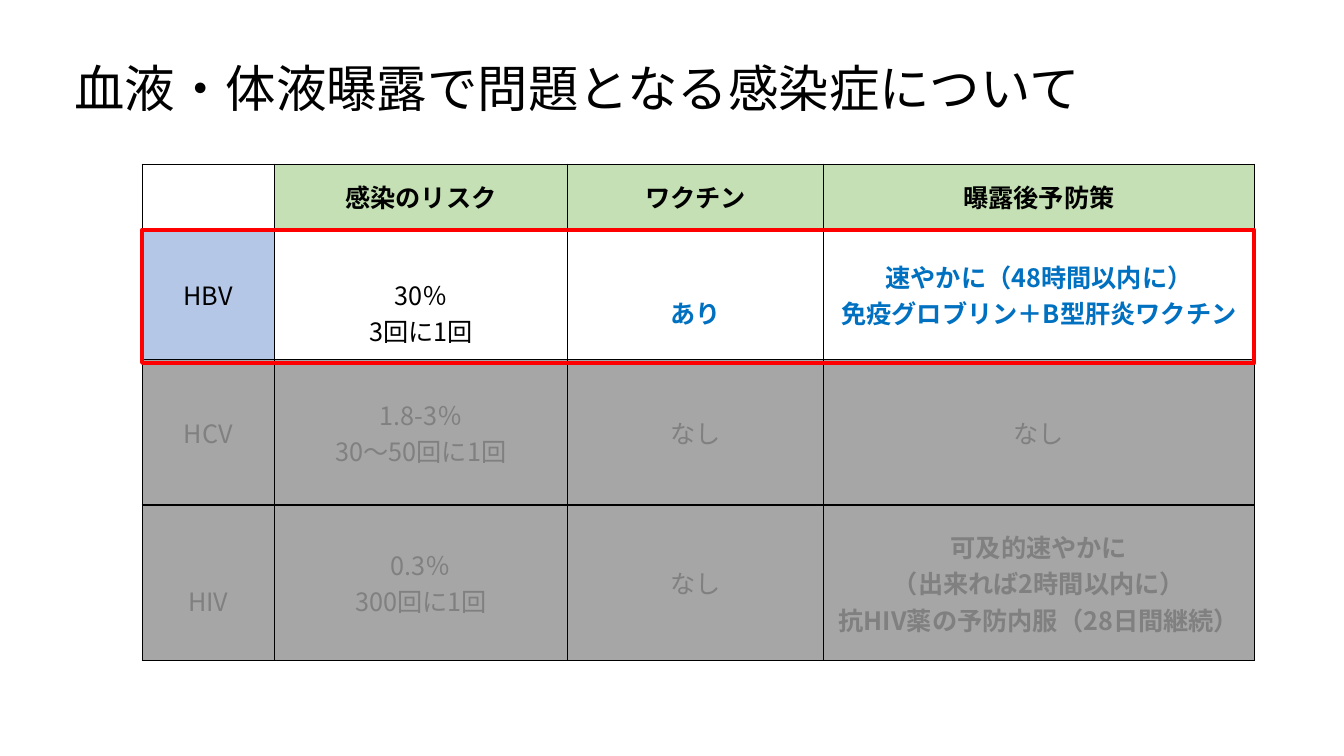
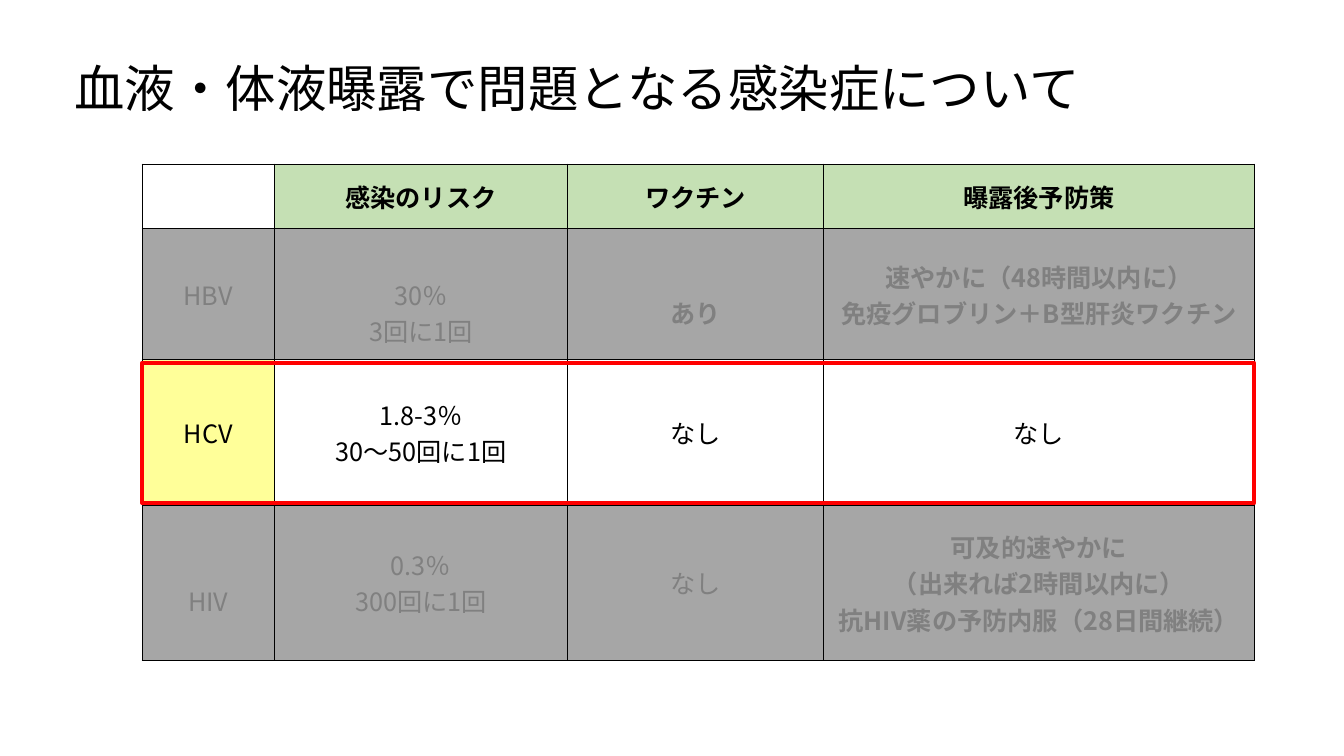
from lxml import etree
from pptx import Presentation
from pptx.dml.color import RGBColor
from pptx.enum.lang import MSO_LANGUAGE_ID
from pptx.enum.shapes import MSO_SHAPE
from pptx.enum.text import MSO_ANCHOR, PP_ALIGN
from pptx.oxml.ns import qn
from pptx.util import Inches, Pt

RECT = MSO_SHAPE.RECTANGLE
TOP, MIDDLE = MSO_ANCHOR.TOP, MSO_ANCHOR.MIDDLE
LEFT, CENTER = PP_ALIGN.LEFT, PP_ALIGN.CENTER
JAPANESE = MSO_LANGUAGE_ID.JAPANESE

FONT = "Noto Sans CJK JP"
COLORS = {
    "black": "000000",
    "red": "FF0000",
    "blue": "0070C0",
    "header": "C5E0B4",
    "hbv": "B4C7E7",
    "hcv": "FFFF99",
    "dim_fill": "A6A6A6",
    "dim_text": "808080",
}

TITLE = "血液・体液曝露で問題となる感染症について"
HEADERS = ["", "感染のリスク", "ワクチン", "曝露後予防策"]
ROWS = [
    ["HBV", "30％\n3回に1回", "あり", "速やかに（48時間以内に）\n免疫グロブリン＋B型肝炎ワクチン"],
    ["HCV", "1.8-3％\n30～50回に1回", "なし", "なし"],
    ["HIV", "0.3％\n300回に1回", "なし", "可及的速やかに\n（出来れば2時間以内に）\n抗HIV薬の予防内服（28日間継続）"],
]
EMPHASIS = {(0, 2), (0, 3), (2, 3)}
LOWERED = {(0, 1), (0, 2), (2, 0)}
LINE_DROP = 0.36

TABLE_LEFT, TABLE_TOP = 1.41, 1.63
COL_WIDTHS = [1.31, 2.91, 2.54, 4.27]
ROW_HEIGHTS = [0.64, 1.3, 1.44, 1.54]
TABLE_WIDTH = sum(COL_WIDTHS)

SLIDES = [
    {"active": 0, "label_fill": "hbv", "frame_top": 2.28, "frame_height": 1.32},
    {"active": 1, "label_fill": "hcv", "frame_top": 3.6, "frame_height": 1.39},
]


def rgb(name):
    return RGBColor.from_string(COLORS[name])


def write_text(tf, text, size=18, color="black", bold=False, align=CENTER, spacing=None):
    for i, line in enumerate(text.split("\n")):
        p = tf.add_paragraph() if i else tf.paragraphs[0]
        p.alignment = align
        if spacing:
            p.line_spacing = spacing
        r = p.add_run()
        r.text = line
        r.font.size = Pt(size)
        r.font.bold = bold
        r.font.name = FONT
        r.font.language_id = JAPANESE
        r.font.color.rgb = rgb(color)
        ea = etree.SubElement(r.font._element, qn("a:ea"))
        ea.set("typeface", FONT)


def add_title(s, text):
    sp = s.shapes.add_textbox(Inches(0.64), Inches(0.59), Inches(11.53), Inches(0.9))
    tf = sp.text_frame
    tf.word_wrap = True
    tf.vertical_anchor = TOP
    write_text(tf, text, size=36, align=LEFT, spacing=0.9)


def set_borders(cell, color="black", width=1):
    tc_pr = cell._tc.get_or_add_tcPr()
    for i, side in enumerate(("lnL", "lnR", "lnT", "lnB")):
        ln = etree.Element(qn("a:" + side), w=str(Pt(width)))
        fill = etree.SubElement(ln, qn("a:solidFill"))
        etree.SubElement(fill, qn("a:srgbClr"), val=COLORS[color])
        tc_pr.insert(i, ln)


def format_cell(cell, text, fill=None, drop=0, **text_format):
    cell.vertical_anchor = MIDDLE
    cell.margin_left = cell.margin_right = Inches(0.08)
    cell.margin_top = Inches(0.05 + drop)
    cell.margin_bottom = Inches(0.05)
    if fill:
        cell.fill.solid()
        cell.fill.fore_color.rgb = rgb(fill)
    else:
        cell.fill.background()
    set_borders(cell)
    if text:
        write_text(cell.text_frame, text, **text_format)


def add_infection_table(s, active, label_fill):
    table = s.shapes.add_table(
        len(ROW_HEIGHTS), len(COL_WIDTHS), Inches(TABLE_LEFT), Inches(TABLE_TOP),
        Inches(TABLE_WIDTH), Inches(sum(ROW_HEIGHTS))).table
    table.first_row = table.horz_banding = False
    for col, width in zip(table.columns, COL_WIDTHS):
        col.width = Inches(width)
    for row, height in zip(table.rows, ROW_HEIGHTS):
        row.height = Inches(height)
    for c, text in enumerate(HEADERS):
        format_cell(table.cell(0, c), text, fill="header" if text else None, bold=True)
    for r, texts in enumerate(ROWS):
        for c, text in enumerate(texts):
            bold = (r, c) in EMPHASIS
            if r == active:
                fill = label_fill if c == 0 else None
                color = "blue" if bold else "black"
            else:
                fill, color = "dim_fill", "dim_text"
            drop = LINE_DROP if (r, c) in LOWERED else 0
            format_cell(table.cell(r + 1, c), text, fill, drop, color=color, bold=bold)


def add_frame(s, top, height):
    sp = s.shapes.add_shape(
        RECT, Inches(TABLE_LEFT), Inches(top), Inches(TABLE_WIDTH), Inches(height))
    sp.shadow.inherit = False
    sp.fill.background()
    sp.line.color.rgb = rgb("red")
    sp.line.width = Pt(3)


def main():
    prs = Presentation()
    prs.slide_width, prs.slide_height = Inches(13.33), Inches(7.5)
    for spec in SLIDES:
        s = prs.slides.add_slide(prs.slide_layouts[6])
        add_title(s, TITLE)
        add_infection_table(s, spec["active"], spec["label_fill"])
        add_frame(s, spec["frame_top"], spec["frame_height"])
    prs.save("out.pptx")


if __name__ == "__main__":
    main()
